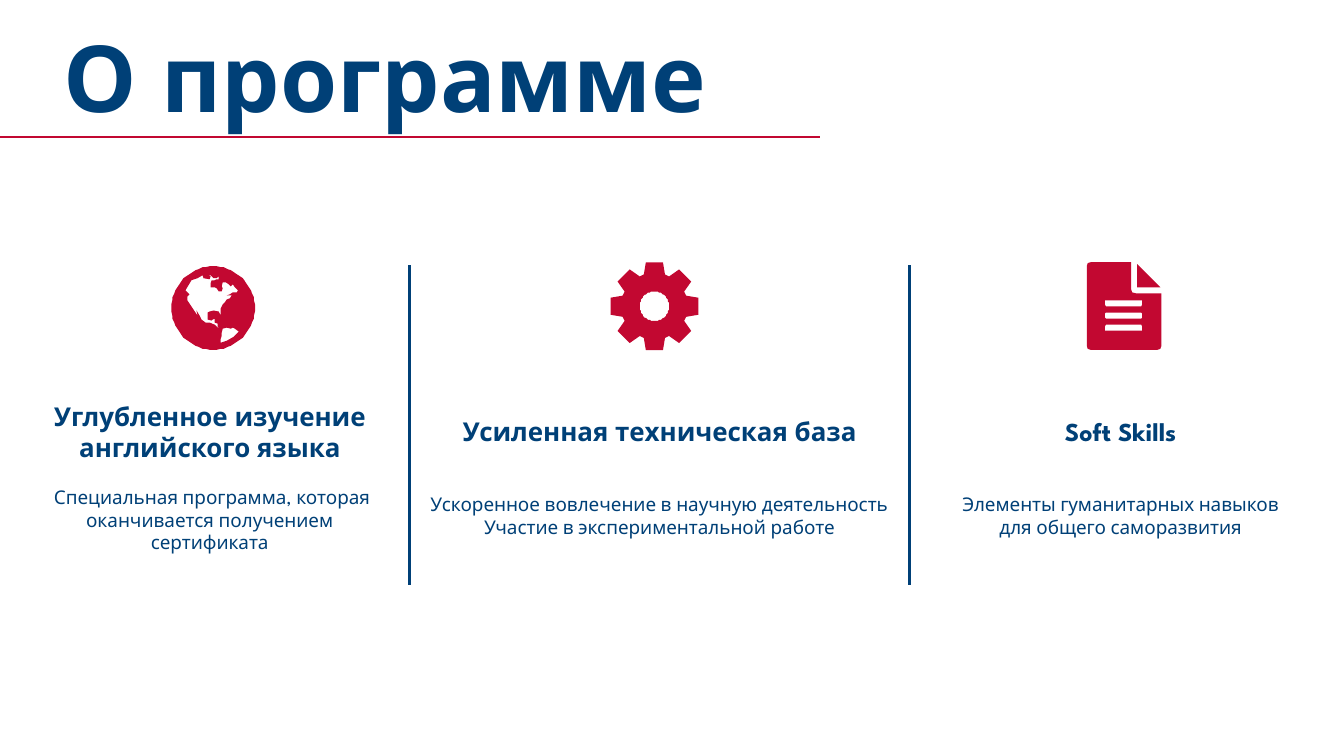
from math import cos, radians, sin

from lxml.etree import SubElement
from pptx import Presentation
from pptx.dml.color import RGBColor
from pptx.enum.shapes import MSO_CONNECTOR
from pptx.enum.text import MSO_ANCHOR, PP_ALIGN
from pptx.oxml.ns import qn
from pptx.util import Inches, Pt

NAVY, RED = "004077", "C20831"
FONT = "League Spartan"
WIDTH, HEIGHT = Inches(13.33), Inches(7.5)
ICON_UNIT = Inches(0.01)
BLANK_LINE = 16.4
TITLE_FORMAT = {"size": Pt(66), "bold": True}
HEADING_FORMAT = {"size": Pt(18.5), "bold": True}
BODY_FORMAT = {"size": Pt(13.5), "bold": False}

AMERICA_NORTH = [
    (55, 29), (58, 28), (61, 26), (65, 26), (66, 24), (63, 21), (61, 18),
    (59, 20), (57, 18), (54, 16), (51, 16), (50, 20), (51, 22), (50, 25),
    (47, 25), (45, 22), (43, 21), (39, 21), (39, 17), (40, 14), (43, 14),
    (45, 13), (47, 13), (47, 10), (45, 12), (42, 12), (39, 9), (36, 8),
    (39, 10), (38, 13), (32, 12), (31, 9), (26, 12), (20, 14), (14, 24),
    (18, 28), (16, 30), (16, 34), (20, 40), (24, 46), (26, 49), (25, 44),
    (28, 49), (30, 53), (34, 56), (38, 56), (43, 58), (46, 61), (49, 64),
    (46, 60), (46, 57), (43, 56), (43, 52), (41, 53), (40, 54), (36, 53),
    (36, 46), (38, 45), (42, 44), (47, 45), (49, 49), (49, 42), (51, 38),
    (53, 36), (55, 33), (58, 32), (60, 29),
]
AMERICA_SOUTH = [
    (67, 65), (63, 62), (61, 61), (59, 62), (55, 61), (51, 62), (50, 66),
    (50, 69), (49, 72), (49, 76), (55, 74), (62, 70),
]
PAGE = [
    (0, 4), (1, 1), (4, 0), (44, 0), (44, 27), (45, 30), (49, 31), (74, 31),
    (74, 83), (73, 86), (70, 87), (4, 87), (1, 86), (0, 83),
]
PAGE_CORNER = [(50, 2), (73, 25), (50, 25)]


def color(value):
    return RGBColor.from_string(value)


def polar(center, radius, angle):
    turn = radians(angle)
    return center + radius * sin(turn), center - radius * cos(turn)


def circle(center, radius):
    return [polar(center, radius, angle) for angle in range(0, 360, 5)]


def text_line(top):
    return [(18, top + 1), (19, top), (54, top), (55, top + 1),
            (55, top + 5), (54, top + 6), (19, top + 6), (18, top + 5)]


def globe():
    return [circle(41.5, 41.5), AMERICA_NORTH, AMERICA_SOUTH]


def gear():
    tooth = [(-18.5, 33), (-10.5, 44), (10.5, 44), (18.5, 33)]
    outline = [polar(43.5, radius, middle + offset)
               for middle in range(0, 360, 45) for offset, radius in tooth]
    return [outline, circle(43.5, 14.5)]


def document():
    return [PAGE, PAGE_CORNER] + [text_line(top) for top in (37.5, 50, 62.5)]


def add_icon(slide, contours, center, bottom):
    xs, ys = zip(*contours[0])
    builder = slide.shapes.build_freeform(*contours[0][0], scale=ICON_UNIT)
    builder.add_line_segments(contours[0][1:], close=True)
    for contour in contours[1:]:
        builder.move_to(*contour[0])
        builder.add_line_segments(contour[1:], close=True)
    shape = builder.convert_to_shape(
        int(center - (min(xs) + max(xs)) / 2 * ICON_UNIT),
        int(bottom - max(ys) * ICON_UNIT))
    shape.shadow.inherit = False
    shape.fill.solid()
    shape.fill.fore_color.rgb = color(RED)
    shape.line.fill.background()


def add_rule(slide, start, end, line_color):
    connector = slide.shapes.add_connector(
        MSO_CONNECTOR.STRAIGHT, *map(int, start + end))
    connector.line.color.rgb = color(line_color)
    connector.line.width = Pt(1.75)
    SubElement(connector._element.spPr, qn("a:effectLst"))


def add_text(slide, box, paragraphs, alignment, anchor):
    frame = slide.shapes.add_textbox(*map(int, box)).text_frame
    frame.word_wrap = True
    frame.vertical_anchor = anchor
    for index, (text, values, gap) in enumerate(paragraphs):
        paragraph = frame.add_paragraph() if index else frame.paragraphs[0]
        paragraph.alignment = alignment
        paragraph.space_before = Pt(gap)
        run = paragraph.add_run()
        run.text = text
        run.font.name = FONT
        run.font.color.rgb = color(NAVY)
        for name, value in values.items():
            setattr(run.font, name, value)


def share(left, top, width, height):
    return (WIDTH * left / 100, HEIGHT * top / 100,
            WIDTH * width / 100, HEIGHT * height / 100)


def add_title(slide, box, text):
    left, top, width, height = box
    add_text(slide, (left + width * 0.04, top + height * 0.11, width * 0.96,
                     height * 0.89), [(text, TITLE_FORMAT, 0)],
             PP_ALIGN.LEFT, MSO_ANCHOR.TOP)
    bottom = top + height
    add_rule(slide, (left, bottom), (left + width * 0.61, bottom), RED)


def add_benefit(slide, box, benefit):
    left, top, width, height = box
    add_icon(slide, benefit["icon"], left + width * benefit["icon_center"],
             top + height * 0.3)
    paragraphs = [(benefit["heading"], HEADING_FORMAT, 0)]
    for index, text in enumerate(benefit["body"]):
        gap = 0 if index else benefit["blank_lines"] * BLANK_LINE
        paragraphs.append((text, BODY_FORMAT, gap))
    add_text(slide, (left, top + height * 0.45, width, height * 0.55),
             paragraphs, PP_ALIGN.CENTER, MSO_ANCHOR.MIDDLE)


def add_dividers(slide, box):
    left, top, width, height = box
    for x in (left, left + width):
        add_rule(slide, (x, top), (x, top + height), NAVY)


BENEFITS = [
    {"column": (2.93, 25.36), "icon": globe(), "icon_center": 0.51,
     "heading": "Углубленное изучение английского языка", "blank_lines": 1,
     "body": [" Специальная программа, которая оканчивается получением сертификата"]},
    {"column": (30.46, 37.21), "icon": gear(), "icon_center": 0.49,
     "heading": "Усиленная техническая база", "blank_lines": 2,
     "body": ["Ускоренное вовлечение в научную деятельность",
              "Участие в экспериментальной работе"]},
    {"column": (70.44, 25.88), "icon": document(), "icon_center": 0.51,
     "heading": "Soft Skills", "blank_lines": 2,
     "body": ["Элементы гуманитарных навыков для общего саморазвития"]},
]


def main():
    presentation = Presentation()
    presentation.slide_width, presentation.slide_height = WIDTH, HEIGHT
    slide = presentation.slides.add_slide(presentation.slide_layouts[6])
    add_title(slide, share(0, 0, 100, 18.13), "О программе")
    for benefit in BENEFITS:
        left, width = benefit["column"]
        add_benefit(slide, share(left, 34.4, width, 39.6), benefit)
    add_dividers(slide, share(30.46, 35.07, 37.21, 42.27))
    presentation.save("out.pptx")


if __name__ == "__main__":
    main()
